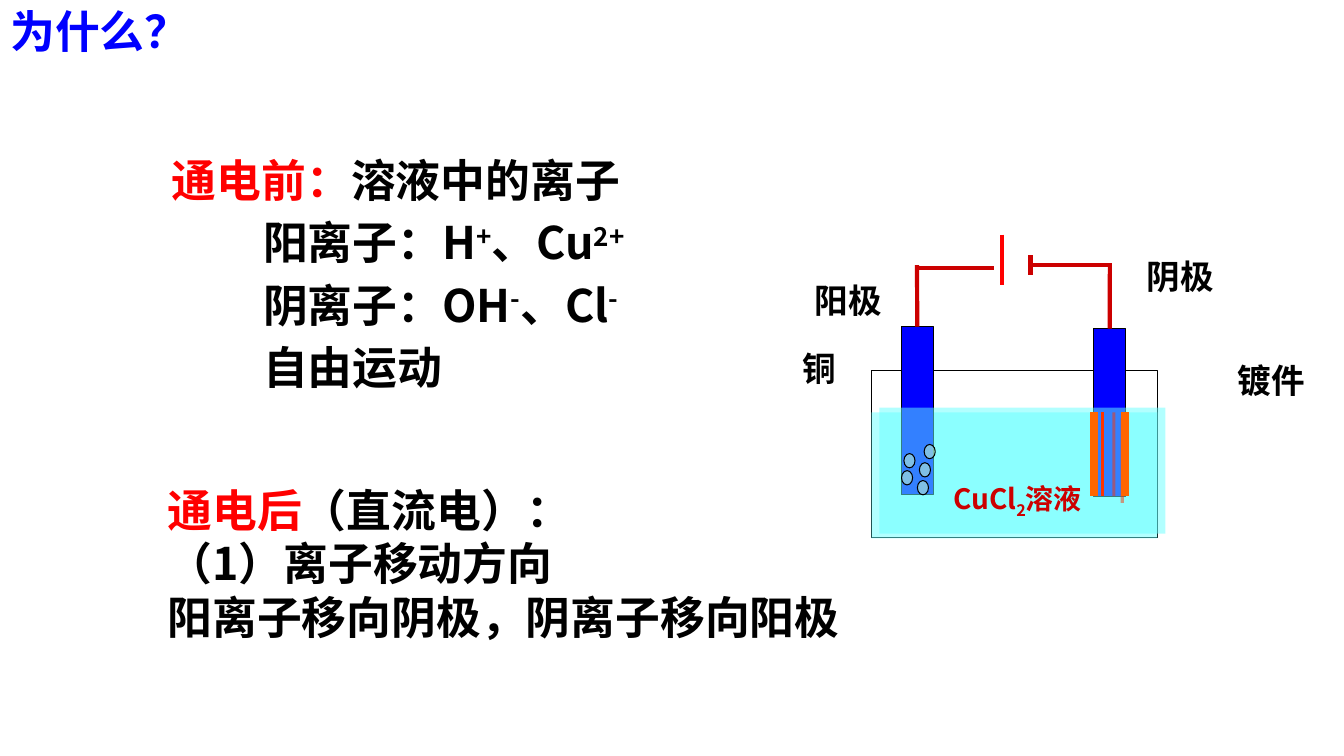
"""Builds the slide on ions in a copper plating cell."""
from dataclasses import dataclass
from typing import Optional

from lxml import etree
from pptx import Presentation
from pptx.dml.color import RGBColor
from pptx.enum.shapes import MSO_CONNECTOR, MSO_SHAPE
from pptx.enum.text import MSO_ANCHOR, PP_ALIGN
from pptx.oxml.ns import qn
from pptx.util import Cm, Pt

RECT, OVAL = MSO_SHAPE.RECTANGLE, MSO_SHAPE.OVAL
STRAIGHT = MSO_CONNECTOR.STRAIGHT
TOP, MIDDLE = MSO_ANCHOR.TOP, MSO_ANCHOR.MIDDLE
LEFT, JUSTIFY = PP_ALIGN.LEFT, PP_ALIGN.JUSTIFY
TOP_SIDE = 0


@dataclass(frozen=True)
class Theme:
    """Colours, font and type sizes."""
    font: str = "Noto Sans CJK SC"
    black: str = "000000"
    white: str = "FFFFFF"
    blue: str = "0000FF"
    red: str = "FF0000"
    wire: str = "CC0000"
    glow: str = "FF3300"
    copper: str = "FF6600"
    liquid: str = "66FFFF"
    bubble: str = "CCFFCC"
    big: int = 32
    label: int = 24
    small: int = 20


THEME = Theme()


@dataclass(frozen=True)
class Box:
    """Place and size in centimetres."""
    left: float
    top: float
    width: float
    height: float


@dataclass(frozen=True)
class Run:
    """Text with its own colour or baseline shift in percent."""
    text: str
    color: Optional[str] = None
    shift: int = 0


@dataclass(frozen=True)
class Part:
    """A filled part of the cell."""
    key: str
    box: Box
    fill: str
    edged: bool = True
    clear: bool = False


@dataclass(frozen=True)
class Line:
    """A straight line, which may end on top of a part."""
    start: tuple[float, float]
    end: tuple[float, float]
    color: str
    width: float = 3
    clear: bool = False
    joint: str = ""


@dataclass(frozen=True)
class Label:
    """A one-line label."""
    text: str
    box: Box


BEFORE = [
    [Run("通电前：", THEME.red), Run("溶液中的离子")],
    [Run("阳离子：H"), Run("+", shift=30), Run("、Cu"), Run("2+", shift=30)],
    [Run("阴离子：OH"), Run("-", shift=30), Run("、Cl"), Run("-", shift=30)],
    [Run("自由运动")],
]
AFTER = [
    [Run("通电后", THEME.red), Run("（直流电）：")],
    [Run("（1）离子移动方向")],
    [Run("阳离子移向阴极，阴离子移向阳极")],
]
FORMULA = [[Run("CuCl"), Run("2", shift=-25), Run("溶液")]]
PARTS = [
    Part("beaker", Box(21.96, 9.33, 7.21, 4.22), THEME.white),
    Part("back liquid", Box(21.96, 10.39, 7.21, 3.18), THEME.liquid, False, True),
    Part("cathode", Box(27.56, 8.28, 0.81, 4.24), THEME.blue),
    Part("anode", Box(22.71, 8.23, 0.81, 4.24), THEME.blue),
    Part("front liquid", Box(22.16, 10.27, 7.21, 3.18), THEME.liquid, False, True),
]
BUBBLES = [(23.29, 11.2), (23.17, 11.66), (22.72, 11.86), (22.78, 11.43), (23.12, 12.11)]
LINES = [
    Line((28.07, 10.39), (28.07, 12.5), THEME.glow, 2.25, True),
    Line((27.79, 10.39), (27.79, 12.5), THEME.glow, 2.25),
    Line((28.28, 10.54), (28.28, 12.67), THEME.glow, 2.25, True),
    Line((28.35, 10.39), (28.35, 12.5), THEME.copper, 6),
    Line((27.57, 10.39), (27.57, 12.5), THEME.copper, 6),
    Line((23.11, 6.68), (23.11, 8.23), THEME.wire, joint="anode"),
    Line((23.14, 6.76), (25.04, 6.76), THEME.wire),
    Line((25.97, 6.43), (25.97, 6.94), THEME.wire),
    Line((25.97, 6.68), (28.02, 6.68), THEME.wire),
    Line((27.97, 6.68), (27.97, 8.28), THEME.wire, joint="cathode"),
    Line((25.25, 5.91), (25.25, 7.18), THEME.red),
]
LABELS = [
    Label("阴极", Box(28.65, 6.32, 2.84, 1.55)),
    Label("阳极", Box(20.28, 6.94, 2.62, 1.55)),
    Label("铜", Box(19.97, 8.64, 1.75, 1.83)),
    Label("镀件", Box(30.94, 8.94, 2.84, 1.83)),
]


def place(box: Box) -> tuple:
    """Return the box as lengths."""
    return Cm(box.left), Cm(box.top), Cm(box.width), Cm(box.height)


def fade(parent) -> None:
    """Make the solid fill of an element half transparent."""
    tint = parent.find(qn("a:solidFill")).find(qn("a:srgbClr"))
    etree.SubElement(tint, qn("a:alpha")).set("val", "50000")


def write(slide, text: list[list[Run]], box: Box, *, size: int = THEME.big,
          color: str = THEME.black, align=LEFT, anchor=TOP, spacing: float = 1,
          before: float = 0, indent: float = 0) -> None:
    """Write paragraphs of runs, with all but the first indented."""
    frame = slide.shapes.add_textbox(*place(box)).text_frame
    frame.word_wrap = True
    frame.vertical_anchor = anchor
    for index, runs in enumerate(text):
        para = frame.add_paragraph() if index else frame.paragraphs[0]
        para.alignment, para.line_spacing = align, spacing
        para.space_before = Pt(before)
        if index and indent:
            para._p.get_or_add_pPr().set("marL", str(Cm(indent)))
        for item in runs:
            run = para.add_run()
            run.text = item.text
            font = run.font
            font.name, font.size, font.bold = THEME.font, Pt(size), True
            font.color.rgb = RGBColor.from_string(item.color or color)
            props = run._r.get_or_add_rPr()
            etree.SubElement(props, qn("a:ea")).set("typeface", THEME.font)
            if item.shift:
                props.set("baseline", str(item.shift * 1000))


def draw_part(shapes, part: Part, kind=RECT):
    """Draw a filled part and return its shape."""
    shape = shapes.add_shape(kind, *place(part.box))
    shape.shadow.inherit = False
    shape.fill.solid()
    shape.fill.fore_color.rgb = RGBColor.from_string(part.fill)
    if part.clear:
        fade(shape._element.spPr)
    if part.edged:
        shape.line.color.rgb = RGBColor.from_string(THEME.black)
        shape.line.width = Pt(0.75)
    else:
        shape.line.fill.background()
    return shape


def draw_line(slide, line: Line, parts: dict) -> None:
    """Draw a line and join it to its part."""
    ends = [Cm(value) for value in line.start + line.end]
    link = slide.shapes.add_connector(STRAIGHT, *ends)
    link.line.color.rgb = RGBColor.from_string(line.color)
    link.line.width = Pt(line.width)
    props = link._element.spPr
    if line.clear:
        fade(props.find(qn("a:ln")))
    etree.SubElement(props, qn("a:effectLst"))
    if line.joint:
        link.end_connect(parts[line.joint], TOP_SIDE)


def main() -> None:
    """Build and save the slide."""
    deck = Presentation()
    deck.slide_width, deck.slide_height = Cm(33.87), Cm(19.05)
    slide = deck.slides.add_slide(deck.slide_layouts[6])
    write(slide, [[Run("为什么？")]], Box(0.01, 0, 5.41, 1.73), color=THEME.blue,
          anchor=MIDDLE, spacing=0.9)
    write(slide, BEFORE, Box(4.08, 3.87, 17.53, 7.19), spacing=0.9, before=10, indent=2.3)
    write(slide, AFTER, Box(3.97, 12.03, 20.4, 4.5))
    parts = {part.key: draw_part(slide.shapes, part) for part in PARTS}
    group = slide.shapes.add_group_shape()
    for left, top in BUBBLES:
        bubble = Part("bubble", Box(left, top, 0.28, 0.36), THEME.bubble, clear=True)
        draw_part(group.shapes, bubble, OVAL)
    for line in LINES:
        draw_line(slide, line, parts)
    for label in LABELS:
        write(slide, [[Run(label.text)]], label.box, size=THEME.label, align=JUSTIFY)
    write(slide, FORMULA, Box(23.77, 12, 4.57, 1.09), size=THEME.small, color=THEME.wire)
    deck.save("out.pptx")


if __name__ == "__main__":
    main()
